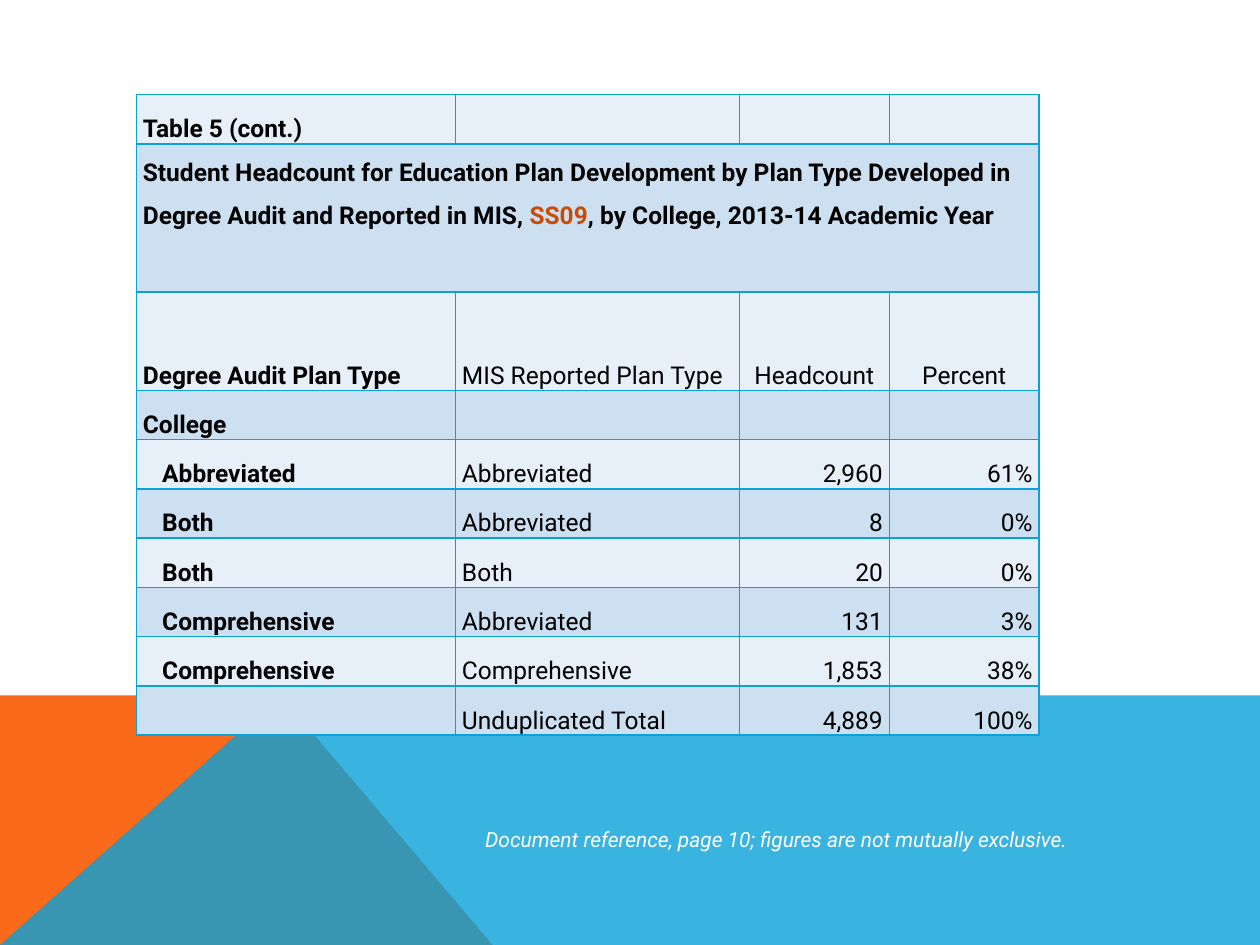
from dataclasses import dataclass

from lxml.etree import SubElement
from pptx import Presentation
from pptx.dml.color import RGBColor
from pptx.enum.text import MSO_ANCHOR, PP_ALIGN
from pptx.oxml.ns import qn
from pptx.util import Cm, Pt


@dataclass(frozen=True)
class Theme:
    """Colours, font and type sizes of the slide."""
    font: str = "Roboto"
    table_size: int = 14
    note_size: int = 12
    text: str = "000000"
    accent: str = "CA4B05"
    light: str = "FFFFFF"
    orange: str = "F96A1B"
    blue: str = "08A1D9"
    bands: tuple = ("E7F0F8", "CCE0F1")


THEME = Theme()
COL_WIDTHS = (6.43, 5.72, 3.02, 3.02)
ROW_UNITS = (1, 3, 2, 1, 1, 1, 1, 1, 1, 1)
TITLE_ROW, HEADER_ROW, FIRST_DATA_ROW = 1, 2, 4
TITLE = (
    "Student Headcount for Education Plan Development by Plan Type "
    "Developed in Degree Audit and Reported in MIS, ",
    "SS09",
    ", by College, 2013-14 Academic Year",
)
ROWS = (
    ("Table 5 (cont.)", "", "", ""),
    (TITLE, "", "", ""),
    ("Degree Audit Plan Type", "MIS Reported Plan Type", "Headcount", "Percent"),
    ("College", "", "", ""),
    ("Abbreviated", "Abbreviated", "2,960", "61%"),
    ("Both", "Abbreviated", "8", "0%"),
    ("Both", "Both", "20", "0%"),
    ("Comprehensive", "Abbreviated", "131", "3%"),
    ("Comprehensive", "Comprehensive", "1,853", "38%"),
    ("", "Unduplicated Total", "4,889", "100%"),
)
NOTE = "Document reference, page 10; figures are not mutually exclusive."


def style_run(r, size, color, bold=False, italic=False):
    """Format one run."""
    r.font.name = THEME.font
    r.font.size = Pt(size)
    r.font.bold = bold
    r.font.italic = italic
    r.font.color.rgb = RGBColor.from_string(color)


def add_polygon(slide, points, color, alpha=None):
    """Draw a filled outline through points in centimetres."""
    pts = [(Cm(x), Cm(y)) for x, y in points]
    fb = slide.shapes.build_freeform(*pts[0])
    fb.add_line_segments(pts[1:], close=True)
    sp = fb.convert_to_shape()
    sp.shadow.inherit = False
    sp.line.fill.background()
    sp.fill.solid()
    sp.fill.fore_color.rgb = RGBColor.from_string(color)
    if alpha is not None:
        clr = sp.fill._xPr.find(".//" + qn("a:srgbClr"))
        SubElement(clr, qn("a:alpha"), val=str(alpha * 1000))


def add_band(slide, left, top, width, height):
    """Draw the two overlapping bands at the foot of the slide."""
    right, bottom = left + width, top + height
    peak, foot = left + 5.66, left + 9.93
    add_polygon(slide, [(left, bottom), (left, top), (peak, top), (foot, bottom)],
                THEME.orange)
    add_polygon(slide, [(left, bottom), (peak, top), (right, top), (right, bottom)],
                THEME.blue, alpha=80)


def set_borders(cell):
    """Give a cell thin lines on all four sides."""
    tc_pr = cell._tc.get_or_add_tcPr()
    for i, side in enumerate(("lnL", "lnR", "lnT", "lnB")):
        ln = tc_pr.makeelement(qn("a:" + side), {"w": str(Pt(1))})
        fill = SubElement(ln, qn("a:solidFill"))
        SubElement(fill, qn("a:srgbClr"), val=THEME.blue)
        tc_pr.insert(i, ln)


def fill_cell(cell, value, row, col):
    """Set the text, fill and borders of one table cell."""
    cell.margin_left = cell.margin_right = Cm(0.13)
    cell.margin_top = cell.margin_bottom = 0
    cell.vertical_anchor = MSO_ANCHOR.TOP if row == TITLE_ROW else MSO_ANCHOR.BOTTOM
    cell.fill.solid()
    cell.fill.fore_color.rgb = RGBColor.from_string(THEME.bands[row % 2])
    set_borders(cell)
    p = cell.text_frame.paragraphs[0]
    p.line_spacing = 1.5
    if col >= 2:
        p.alignment = PP_ALIGN.CENTER if row == HEADER_ROW else PP_ALIGN.RIGHT
    elif col == 0 and row >= FIRST_DATA_ROW:
        p._p.get_or_add_pPr().set("indent", str(Cm(0.39)))
    for i, text in enumerate((value,) if isinstance(value, str) else value):
        if text:
            r = p.add_run()
            r.text = text
            style_run(r, THEME.table_size, THEME.accent if i == 1 else THEME.text,
                      bold=col == 0)


def add_headcount_table(slide, left, top, width, height):
    """Place the headcount table in the given box."""
    frame = slide.shapes.add_table(len(ROWS), len(COL_WIDTHS), Cm(left), Cm(top),
                                   Cm(width), Cm(height))
    table = frame.table
    table.first_row = table.horz_banding = False
    for column, share in zip(table.columns, COL_WIDTHS):
        column.width = Cm(width * share / sum(COL_WIDTHS))
    for row, units in zip(table.rows, ROW_UNITS):
        row.height = Cm(height * units / sum(ROW_UNITS))
    for i, values in enumerate(ROWS):
        for j, value in enumerate(values):
            fill_cell(table.cell(i, j), value, i, j)
    table.cell(TITLE_ROW, 0).merge(table.cell(TITLE_ROW, len(COL_WIDTHS) - 1))


def add_note(slide, left, top, width, height):
    """Place the reference note in the given box."""
    box = slide.shapes.add_textbox(Cm(left), Cm(top), Cm(width), Cm(height))
    tf = box.text_frame
    tf.word_wrap = True
    tf.text = NOTE
    style_run(tf.paragraphs[0].runs[0], THEME.note_size, THEME.light, italic=True)


def main():
    """Build and save the slide."""
    prs = Presentation()
    prs.slide_width, prs.slide_height = Cm(25.4), Cm(19.05)
    slide = prs.slides.add_slide(prs.slide_layouts[6])
    add_band(slide, 0, 14.02, 25.4, 5.03)
    add_headcount_table(slide, 2.75, 1.91, 18.2, 12.91)
    add_note(slide, 9.53, 16.54, 13.49, 0.76)
    prs.save("out.pptx")


if __name__ == "__main__":
    main()
